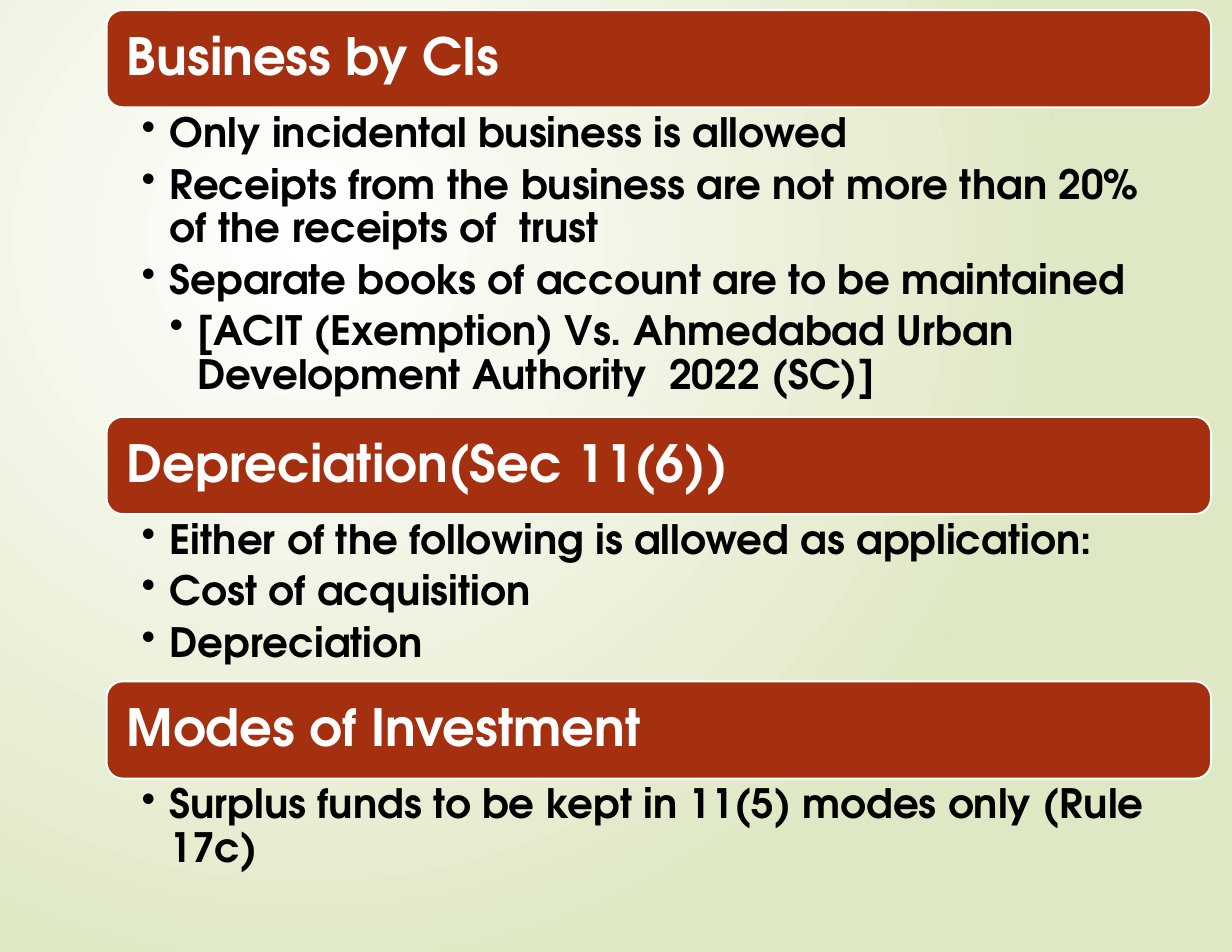
from lxml import etree
from pptx import Presentation
from pptx.dml.color import RGBColor
from pptx.enum.shapes import MSO_SHAPE
from pptx.enum.text import MSO_ANCHOR, PP_ALIGN
from pptx.oxml.ns import qn
from pptx.util import Pt

ROUNDED = MSO_SHAPE.ROUNDED_RECTANGLE
MIDDLE, TOP = MSO_ANCHOR.MIDDLE, MSO_ANCHOR.TOP
LEFT_ALIGNED = PP_ALIGN.LEFT

WHITE = RGBColor(0xFF, 0xFF, 0xFF)
BLACK = RGBColor(0x00, 0x00, 0x00)
RUST = RGBColor(0xA5, 0x30, 0x10)
PALE_GREEN = RGBColor(0xDF, 0xE8, 0xC4)

FONT = "TeX Gyre Adventor"
LEFT, FIRST_TOP, WIDTH = 68.5, 6.5, 710
HEADING_HEIGHT = 62.5
INDENT = 18

HEADING_FONT = {"name": FONT, "size": Pt(33), "bold": True}
POINT_FONT = {"name": FONT, "size": Pt(26), "bold": True}
HEADING_FRAME = {
    "word_wrap": True, "vertical_anchor": MIDDLE,
    "margin_left": Pt(10), "margin_right": Pt(10),
    "margin_top": Pt(10), "margin_bottom": Pt(10),
}
POINT_FRAME = {
    "word_wrap": True, "vertical_anchor": TOP,
    "margin_left": Pt(22.5), "margin_right": Pt(18.5),
    "margin_top": Pt(3.5), "margin_bottom": Pt(3.5),
}
HEADING_PARAGRAPH = {"alignment": LEFT_ALIGNED, "line_spacing": 0.9}
POINT_PARAGRAPH = {
    "alignment": LEFT_ALIGNED, "line_spacing": 0.9, "space_after": Pt(5),
}

SECTIONS = [
    ("Business by CIs", 199, [
        (1, "Only incidental business is allowed"),
        (1, "Receipts from the business are not more than 20% "
            "of the receipts of  trust"),
        (1, "Separate books of account are to be maintained"),
        (2, "[ACIT (Exemption) Vs. Ahmedabad Urban "
            "Development Authority  2022 (SC)]"),
    ]),
    ("Depreciation(Sec 11(6))", 107.5, [
        (1, "Either of the following is allowed as application:"),
        (1, "Cost of acquisition"),
        (1, "Depreciation"),
    ]),
    ("Modes of Investment", 65, [
        (1, "Surplus funds to be kept in 11(5) modes only (Rule 17c)"),
    ]),
]


def apply(target, values):
    for name, value in values.items():
        setattr(target, name, value)


def paint_background(page):
    fill = page.background.fill
    fill.gradient()
    for stop, color in zip(fill.gradient_stops, (WHITE, PALE_GREEN)):
        stop.color.rgb = color
    gradient = page.background._cSld.find(".//" + qn("a:gradFill"))
    linear = gradient.find(qn("a:lin"))
    radial = etree.Element(qn("a:path"), {"path": "circle"})
    etree.SubElement(radial, qn("a:fillToRect"), {
        "l": "50000", "t": "50000", "r": "100000", "b": "100000",
    })
    gradient.replace(linear, radial)


def write(para, text, layout, font, color):
    apply(para, layout)
    span = para.add_run()
    span.text = text
    apply(span.font, font)
    span.font.color.rgb = color


def add_bullet(para, level):
    para.level = level
    properties = para._p.get_or_add_pPr()
    properties.set("marL", str(Pt(INDENT * level)))
    properties.set("indent", str(-Pt(INDENT)))
    etree.SubElement(properties, qn("a:buChar"), {"char": "•"})


def add_heading(page, top, text):
    bar = page.shapes.add_shape(
        ROUNDED, Pt(LEFT), Pt(top), Pt(WIDTH), Pt(HEADING_HEIGHT))
    bar.shadow.inherit = False
    bar.fill.solid()
    bar.fill.fore_color.rgb = RUST
    bar.line.color.rgb = WHITE
    bar.line.width = Pt(1.25)
    apply(bar.text_frame, HEADING_FRAME)
    write(bar.text_frame.paragraphs[0], text,
          HEADING_PARAGRAPH, HEADING_FONT, WHITE)


def add_points(page, top, height, points):
    box = page.shapes.add_textbox(Pt(LEFT), Pt(top), Pt(WIDTH), Pt(height))
    frame = box.text_frame
    apply(frame, POINT_FRAME)
    for index, (level, text) in enumerate(points):
        para = frame.add_paragraph() if index else frame.paragraphs[0]
        add_bullet(para, level)
        write(para, text, POINT_PARAGRAPH, POINT_FONT, BLACK)


def main():
    deck = Presentation()
    deck.slide_width, deck.slide_height = Pt(792), Pt(612)
    page = deck.slides.add_slide(deck.slide_layouts[6])
    paint_background(page)
    top = FIRST_TOP
    for heading, height, points in SECTIONS:
        add_heading(page, top, heading)
        add_points(page, top + HEADING_HEIGHT, height, points)
        top += HEADING_HEIGHT + height
    deck.save("out.pptx")


if __name__ == "__main__":
    main()
